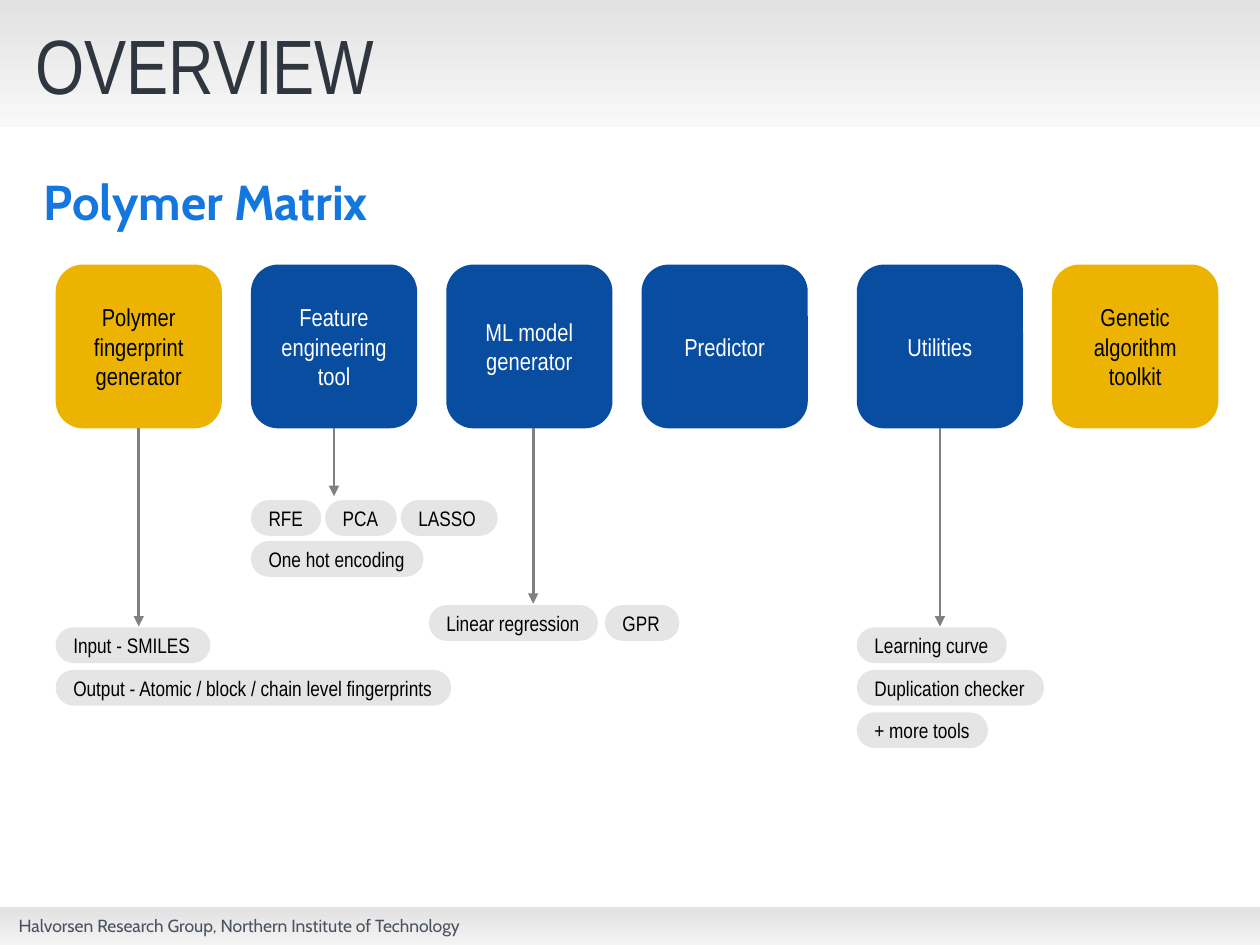
from copy import deepcopy

from lxml import etree
from pptx import Presentation
from pptx.dml.color import RGBColor
from pptx.enum import shapes, text
from pptx.oxml import ns
from pptx.util import Pt

NARROW, CABIN = "Arial Narrow", "Cabin"
BLUE, GOLD, GREY = "094DA1", "ECB400", "E5E5E5"
BLACK, WHITE = "000000", "FFFFFF"
BOX_TOP, BOX_WIDTH, BOX_HEIGHT, BOX_PITCH = 151.2, 95, 93.6, 111.6
BOX_BOTTOM = BOX_TOP + BOX_HEIGHT
PILL_HEIGHT = 20.4


def color(value):
    return RGBColor.from_string(value)


def write(shape, content, size, ink, font=NARROW, bold=False, align="LEFT",
          anchor="MIDDLE", wrap=True, grow=False, insets=(7.2, 3.6)):
    frame = shape.text_frame
    frame.word_wrap = wrap
    frame.auto_size = (text.MSO_AUTO_SIZE.SHAPE_TO_FIT_TEXT if grow
                       else text.MSO_AUTO_SIZE.NONE)
    frame.vertical_anchor = getattr(text.MSO_ANCHOR, anchor)
    frame.margin_left = frame.margin_right = Pt(insets[0])
    frame.margin_top = frame.margin_bottom = Pt(insets[1])
    paragraph = frame.paragraphs[0]
    paragraph.text = content.replace("\n", "\v")
    paragraph.alignment = getattr(text.PP_ALIGN, align)
    for run in paragraph.runs:
        run.font.name = font
        run.font.size = Pt(size)
        run.font.bold = bold
        run.font.color.rgb = color(ink)
    for line_break in paragraph._p.findall(ns.qn("a:br")):
        line_break.append(deepcopy(paragraph.runs[0]._r.get_or_add_rPr()))


class Builder:
    def __init__(self, presentation):
        self.slide = presentation.slides.add_slide(presentation.slide_layouts[5])
        self.shapes = self.slide.shapes

    def shape(self, kind, left, top, width, height):
        shape = self.shapes.add_shape(
            kind, Pt(left), Pt(top), Pt(width), Pt(height))
        shape.shadow.inherit = False
        shape.line.fill.background()
        return shape

    def band(self, top, height, start, end):
        band = self.shape(shapes.MSO_SHAPE.RECTANGLE, 0, top, 720, height)
        band.fill.gradient()
        band.fill.gradient_angle = 270
        for stop, value in zip(band.fill.gradient_stops, (start, end)):
            stop.color.rgb = color(value)

    def title(self, content, left, top, width, height):
        title = self.shapes.title
        title.left, title.top = Pt(left), Pt(top)
        title.width, title.height = Pt(width), Pt(height)
        write(title, content, 44, "2F3640")
        self.shapes.element.append(title.element)

    def label(self, content, left, top, width, height, size, ink, **style):
        label = self.shapes.add_textbox(Pt(left), Pt(top), Pt(width), Pt(height))
        write(label, content, size, ink, font=CABIN, anchor="BOTTOM",
              grow=True, **style)

    def box(self, content, left, fill, ink):
        box = self.shape(shapes.MSO_SHAPE.ROUNDED_RECTANGLE,
                         left, BOX_TOP, BOX_WIDTH, BOX_HEIGHT)
        box.fill.solid()
        box.fill.fore_color.rgb = color(fill)
        write(box, content, 14, ink, align="CENTER")
        return box

    def pill(self, content, left, top, width):
        pill = self.shape(shapes.MSO_SHAPE.ROUNDED_RECTANGLE,
                          left, top, width, PILL_HEIGHT)
        pill.adjustments[0] = 0.5
        pill.fill.solid()
        pill.fill.fore_color.rgb = color(GREY)
        write(pill, content, 12, BLACK, wrap=False, grow=True, insets=(7.2, 0))

    def arrow(self, x, bottom, source=None):
        arrow = self.shapes.add_connector(
            shapes.MSO_CONNECTOR.STRAIGHT, Pt(x), Pt(BOX_BOTTOM), Pt(x), Pt(bottom))
        if source is not None:
            arrow.begin_connect(source, 2)
        arrow.line.width = Pt(1.5)
        arrow.line.color.rgb = color("808080")
        etree.SubElement(arrow.line._get_or_add_ln(), ns.qn("a:tailEnd"),
                         type="triangle")
        etree.SubElement(arrow.element.spPr, ns.qn("a:effectLst"))


def main():
    presentation = Presentation()
    presentation.slide_width, presentation.slide_height = Pt(720), Pt(540)
    builder = Builder(presentation)

    builder.band(518.4, 21.6, "E2E2E2", "F3F3F3")
    builder.band(0, 72.8, "E2E2E2", "F8F8F8")
    builder.label("Halvorsen Research Group, Northern Institute of Technology",
                  3.6, 519.1, 314.6, 19.4, 10, "49525E")
    builder.title("OVERVIEW", 13, 5.8, 703.4, 61.2)
    builder.label("Polymer Matrix", 18, 94.3, 239, 41, 28, "1476DF",
                  bold=True, wrap=False)

    first, second = 31.8, 489.6
    lefts = [first + BOX_PITCH * i for i in range(4)]
    lefts += [second + BOX_PITCH * i for i in range(2)]
    modules = [
        ("Polymer fingerprint generator", GOLD, BLACK),
        ("Feature\nengineering\ntool", BLUE, WHITE),
        ("ML model\ngenerator", BLUE, WHITE),
        ("Predictor", BLUE, WHITE),
        ("Utilities", BLUE, WHITE),
        ("Genetic algorithm toolkit", GOLD, BLACK),
    ]
    boxes = [builder.box(content, left, fill, ink)
             for left, (content, fill, ink) in zip(lefts, modules)]

    for index, bottom in ((0, 358), (1, 283.5), (4, 358)):
        builder.arrow(lefts[index] + BOX_WIDTH / 2, bottom, boxes[index])
    builder.arrow(304.7, 345)

    pills = [
        ("Input - SMILES", lefts[0], 358.5, 88.4),
        ("Output - Atomic / block / chain level fingerprints", lefts[0], 382.8, 226),
        ("RFE", lefts[1], 285.8, 40.2),
        ("PCA", 185.8, 285.8, 41),
        ("LASSO", 229, 285.8, 55.4),
        ("One hot encoding", lefts[1], 309.2, 98.6),
        ("Linear regression", 245, 345.8, 96.7),
        ("GPR", 345.6, 345.8, 42.6),
        ("Learning curve", lefts[4], 358.5, 85.7),
        ("Duplication checker", lefts[4], 382.8, 107),
        ("+ more tools", lefts[4], 407.1, 75),
    ]
    for pill in pills:
        builder.pill(*pill)

    presentation.save("out.pptx")


if __name__ == "__main__":
    main()
